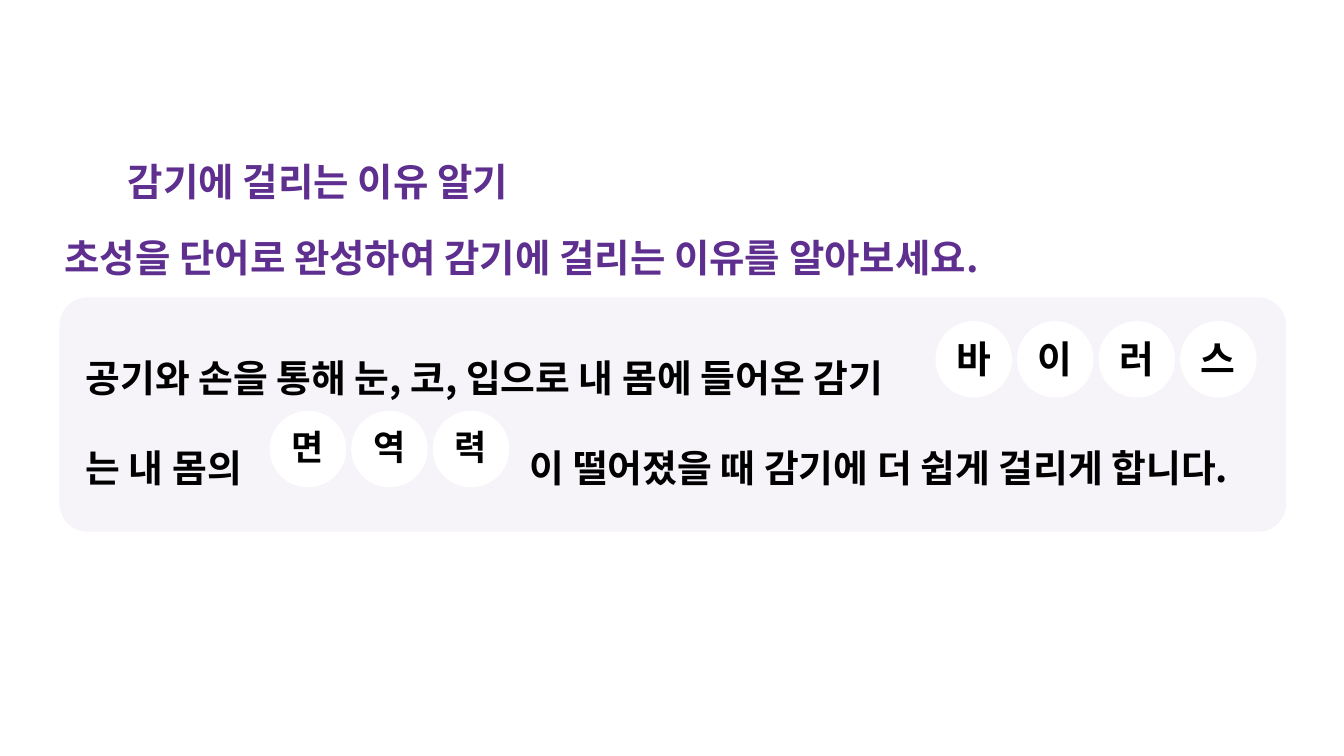
from dataclasses import dataclass

from lxml.etree import SubElement
from pptx import Presentation
from pptx.dml.color import RGBColor
from pptx.enum.shapes import MSO_SHAPE as Preset
from pptx.enum.text import MSO_AUTO_SIZE as AutoSize, PP_ALIGN as Align
from pptx.oxml.ns import qn
from pptx.util import Pt

FONT = "Noto Sans CJK KR"
COLORS = {"title": "5E2F8F", "panel": "F6F3F9", "answer": "FFFFFF", "body": "000000"}
CIRCLE = 109.4
CIRCLE_PITCH = 116.5
ANSWER_TAB = 634.5


@dataclass(frozen=True)
class TextBlock:
    lines: tuple[str, ...]
    left: float
    top: float
    width: float
    height: float
    size: float
    color: str
    spacing: float
    wrap: bool = True
    align: Align = Align.LEFT


@dataclass(frozen=True)
class AnswerWord:
    syllables: str
    left: float
    top: float
    size: float
    label: float
    drop: float


HEADINGS = (
    TextBlock(("감기에 걸리는 이유 알기",), 175.7, 230.4, 583.9, 67, 55, "title", 0.9, wrap=False),
    TextBlock(("초성을 단어로 완성하여 감기에 걸리는 이유를 알아보세요.",),
              85, 298, 1540, 95.8, 55, "title", 1.5),
)
SENTENCE = TextBlock(
    ("공기와 손을 통해 눈, 코, 입으로 내 몸에 들어온 감기",
     "는 내 몸의\t이 떨어졌을 때 감기에 더 쉽게 걸리게 합니다."),
    115.2, 437.8, 1779, 269.3, 54, "body", 2.0)
ANSWERS = (
    AnswerWord("바이러스", 1336.3, 458.6, 54, 65.8, 2.8),
    AnswerWord("면역력", 385.2, 586.8, 50, 61.9, 0),
)


def apply_format(target: object, values: dict[str, object]) -> None:
    """Set every named attribute on the target."""
    for name, value in values.items():
        setattr(target, name, value)


def add_text(shapes: object, block: TextBlock) -> None:
    """Add a text box holding one paragraph per line."""
    box = shapes.add_textbox(*map(Pt, (block.left, block.top, block.width, block.height)))
    frame = box.text_frame
    apply_format(frame, {"word_wrap": block.wrap, "auto_size": AutoSize.SHAPE_TO_FIT_TEXT})
    for index, line in enumerate(block.lines):
        paragraph = frame.add_paragraph() if index else frame.paragraphs[0]
        apply_format(paragraph, {"alignment": block.align, "line_spacing": block.spacing})
        if "\t" in line:
            tabs = SubElement(paragraph._p.get_or_add_pPr(), qn("a:tabLst"))
            SubElement(tabs, qn("a:tab"), pos=str(Pt(ANSWER_TAB)), algn="l")
        run = paragraph.add_run()
        run.text = line
        apply_format(run.font, {"name": FONT, "size": Pt(block.size), "bold": True})
        run.font.color.rgb = RGBColor.from_string(COLORS[block.color])
        SubElement(run._r.get_or_add_rPr(), qn("a:ea"), typeface=FONT)


def add_filled(shapes: object, preset: Preset, left: float, top: float,
               width: float, height: float, color: str) -> object:
    """Add a flat preset shape without an outline."""
    shape = shapes.add_shape(preset, *map(Pt, (left, top, width, height)))
    shape.shadow.inherit = False
    shape.fill.solid()
    shape.fill.fore_color.rgb = RGBColor.from_string(COLORS[color])
    shape.line.fill.background()
    return shape


def add_answer(shapes: object, word: AnswerWord) -> None:
    """Draw a row of circles, each grouped with its syllable."""
    inset = (CIRCLE - word.label) / 2
    for index, syllable in enumerate(word.syllables):
        left = word.left + index * CIRCLE_PITCH
        group = add_group(shapes)
        add_filled(group, Preset.OVAL, left, word.top, CIRCLE, CIRCLE, "answer")
        add_text(group, TextBlock((syllable,), left + inset, word.top + inset + word.drop,
                                  word.label, word.label, word.size, "body", 0.9,
                                  wrap=False, align=Align.CENTER))


def add_group(shapes: object) -> object:
    """Add an empty group and return its shapes."""
    return shapes.add_group_shape().shapes


def main() -> None:
    """Build and save the slide."""
    presentation = Presentation()
    apply_format(presentation, {"slide_width": Pt(1920), "slide_height": Pt(1080)})
    slide = presentation.slides.add_slide(presentation.slide_layouts[6])
    for heading in HEADINGS:
        add_text(slide.shapes, heading)
    panel = add_filled(slide.shapes, Preset.ROUNDED_RECTANGLE, 85, 424.8, 1752.5, 334.8, "panel")
    panel.adjustments[0] = 0.12
    add_text(slide.shapes, SENTENCE)
    for word in ANSWERS:
        add_answer(slide.shapes, word)
    presentation.save("out.pptx")


if __name__ == "__main__":
    main()
